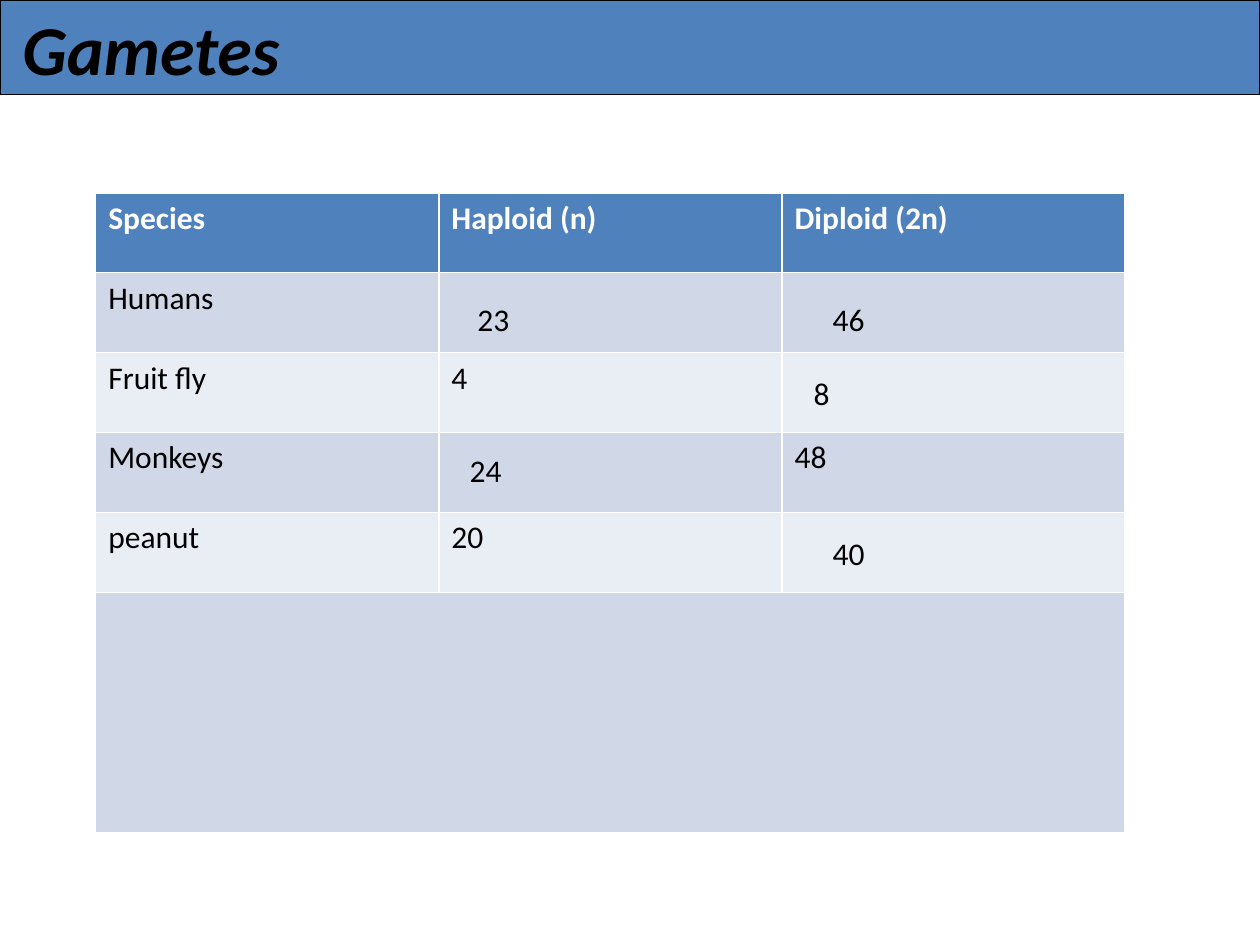
from pptx import Presentation
from pptx.dml.color import RGBColor
from pptx.enum.shapes import MSO_SHAPE
from pptx.enum.text import MSO_ANCHOR, MSO_AUTO_SIZE
from pptx.util import Inches, Pt

BLUE, BLACK, WHITE = "4F81BD", "000000", "FFFFFF"
BANDS = ("D0D8E8", "E9EDF4")

ROWS = [
    ("Species", "Haploid (n)", "Diploid (2n)"),
    ("Humans", "", ""),
    ("Fruit fly", "4", ""),
    ("Monkeys", "", "48"),
    ("peanut", "20", ""),
    ("", "", ""),
]
ROW_HEIGHT, LAST_ROW_HEIGHT = 0.635, 1.905

# Answers laid over the empty cells: text, left, top, width
ANSWERS = [
    ("23", 3.69, 2.33, 0.46),
    ("46", 6.51, 2.33, 0.46),
    ("8", 6.36, 2.92, 0.33),
    ("24", 3.63, 3.53, 0.46),
    ("40", 6.51, 4.19, 0.46),
]


def color(hex_value):
    return RGBColor.from_string(hex_value)


def set_font(paragraph, size, hex_value, bold=False, italic=False):
    font = paragraph.font
    font.name = "Calibri"
    font.size = Pt(size)
    font.bold = bold
    font.italic = italic
    font.color.rgb = color(hex_value)


def add_banner(slide):
    banner = slide.shapes.add_shape(
        MSO_SHAPE.RECTANGLE, 0, 0, Inches(10), Inches(0.75))
    banner.shadow.inherit = False
    banner.fill.solid()
    banner.fill.fore_color.rgb = color(BLUE)
    banner.line.color.rgb = color(BLACK)
    banner.line.width = Pt(0.75)


def add_text(slide, text, left, top, width, height):
    box = slide.shapes.add_textbox(*map(Inches, (left, top, width, height)))
    box.text_frame.text = text
    return box.text_frame


def add_title(slide, text):
    frame = add_text(slide, text, 0.08, -0.25, 9, 1.25)
    frame.word_wrap = True
    frame.vertical_anchor = MSO_ANCHOR.MIDDLE
    set_font(frame.paragraphs[0], 40, BLACK, bold=True, italic=True)


def add_answer(slide, text, left, top, width):
    frame = add_text(slide, text, left, top, width, 0.4)
    frame.word_wrap = False
    frame.auto_size = MSO_AUTO_SIZE.SHAPE_TO_FIT_TEXT
    set_font(frame.paragraphs[0], 18, BLACK)


def add_species_table(slide):
    table = slide.shapes.add_table(
        len(ROWS), len(ROWS[0]),
        Inches(0.76), Inches(1.53), Inches(8.17), Inches(5.08)).table
    for row in table.rows:
        row.height = Inches(ROW_HEIGHT)
    table.rows[len(ROWS) - 1].height = Inches(LAST_ROW_HEIGHT)

    for row_index, texts in enumerate(ROWS):
        header = row_index == 0
        for column_index, text in enumerate(texts):
            cell = table.cell(row_index, column_index)
            cell.text = text
            cell.fill.solid()
            cell.fill.fore_color.rgb = color(
                BLUE if header else BANDS[(row_index - 1) % 2])
            set_font(cell.text_frame.paragraphs[0], 18,
                     WHITE if header else BLACK, bold=header)

    last = len(ROWS) - 1
    table.cell(last, 0).merge(table.cell(last, len(ROWS[0]) - 1))


def main():
    presentation = Presentation()
    presentation.slide_width = Inches(10)
    presentation.slide_height = Inches(7.5)
    slide = presentation.slides.add_slide(presentation.slide_layouts[6])
    add_banner(slide)
    add_title(slide, "Gametes")
    add_species_table(slide)
    for answer in ANSWERS:
        add_answer(slide, *answer)
    presentation.save("out.pptx")


if __name__ == "__main__":
    main()
